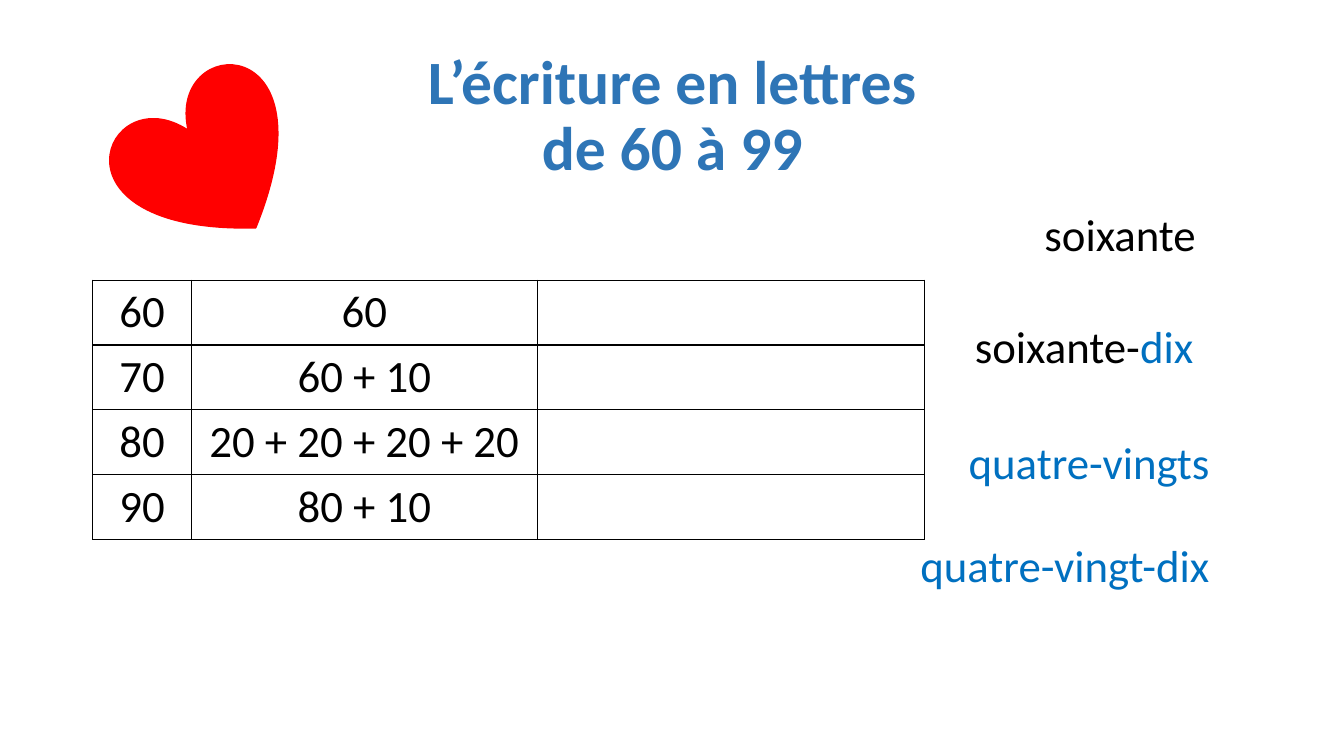
import lxml.etree
import pptx
import pptx.dml.color
import pptx.enum.shapes
import pptx.enum.text
import pptx.oxml.ns
import pptx.util

BLACK, BLUE, NAVY, RED = "000000", "0070C0", "2E75B6", "FF0000"
MID = pptx.enum.text.PP_ALIGN.CENTER
BODY = {"name": "Calibri", "size": pptx.util.Pt(32), "bold": False}
HEAD = {"name": "Calibri", "size": pptx.util.Pt(44), "bold": True}

deck = pptx.Presentation()
deck.slide_width = pptx.util.Inches(13.33)
deck.slide_height = pptx.util.Inches(7.5)
slide = deck.slides.add_slide(deck.slide_layouts[6])


def place(left, top, width, height):
    """Turn percentages of the slide's size into lengths."""
    wide, high = deck.slide_width / 100, deck.slide_height / 100
    return int(left * wide), int(top * high), int(width * wide), int(height * high)


def write(line, parts, font, form):
    """Fill a paragraph with (text, colour) parts."""
    for key, value in form.items():
        setattr(line, key, value)
    for text, shade in parts:
        run = line.add_run()
        run.text = text
        for key, value in font.items():
            setattr(run.font, key, value)
        run.font.color.rgb = pptx.dml.color.RGBColor.from_string(shade)


# Title
frame = slide.shapes.add_textbox(*place(6.9, 5.87, 86.27, 19.33)).text_frame
frame.word_wrap = True
frame.vertical_anchor = pptx.enum.text.MSO_ANCHOR.MIDDLE
form = {"alignment": MID, "line_spacing": 0.9}
write(frame.paragraphs[0], [("L’écriture en lettres", NAVY)], HEAD, form)
write(frame.add_paragraph(), [("de 60 à 99", NAVY)], HEAD, form)

# Heart
heart = slide.shapes.add_shape(
    pptx.enum.shapes.MSO_SHAPE.HEART, *place(9.08, 11.07, 13.2, 20.93))
heart.rotation = 325.3
heart.shadow.inherit = False
heart.fill.solid()
for ink in (heart.fill.fore_color, heart.line.color):
    ink.rgb = pptx.dml.color.RGBColor.from_string(RED)
heart.line.width = pptx.util.Pt(1)

# Table of tens and their sums; the last column stays empty
rows = [
    ("60", "60", ""),
    ("70", "60 + 10", ""),
    ("80", "20 + 20 + 20 + 20", ""),
    ("90", "80 + 10", ""),
]
spans = (7.35, 25.73, 28.81)
table = slide.shapes.add_table(
    len(rows), len(spans), *place(6.9, 37.07, sum(spans), 34.27)).table
table.first_row = table.horz_banding = False
for column, span in zip(table.columns, spans):
    column.width = place(0, 0, span, 0)[2]
for r, row in enumerate(rows):
    for c, text in enumerate(row):
        cell = table.cell(r, c)
        cell.fill.background()
        parts = [(text, BLACK)] if text else []
        write(cell.text_frame.paragraphs[0], parts, BODY, {"alignment": MID})
        for i, side in enumerate(("a:lnL", "a:lnR", "a:lnT", "a:lnB")):
            edge = lxml.etree.Element(pptx.oxml.ns.qn(side), w=str(pptx.util.Pt(1)))
            fill = lxml.etree.SubElement(edge, pptx.oxml.ns.qn("a:solidFill"))
            lxml.etree.SubElement(fill, pptx.oxml.ns.qn("a:srgbClr"), val=BLACK)
            cell._tc.get_or_add_tcPr().insert(i, edge)

# Number words beside the table
words = [
    (76.97, 26.67, 12.9, [("soixante", BLACK)]),
    (71.79, 41.47, 18.68, [("soixante-", BLACK), ("dix", BLUE)]),
    (71.34, 56.8, 20.41, [("quatre-vingts", BLUE)]),
    (67.74, 70.53, 24.16, [("quatre-vingt-dix", BLUE)]),
]
for left, top, width, parts in words:
    frame = slide.shapes.add_textbox(*place(left, top, width, 8.53)).text_frame
    frame.word_wrap = False
    frame.auto_size = pptx.enum.text.MSO_AUTO_SIZE.SHAPE_TO_FIT_TEXT
    write(frame.paragraphs[0], parts, BODY, {})

deck.save("out.pptx")
